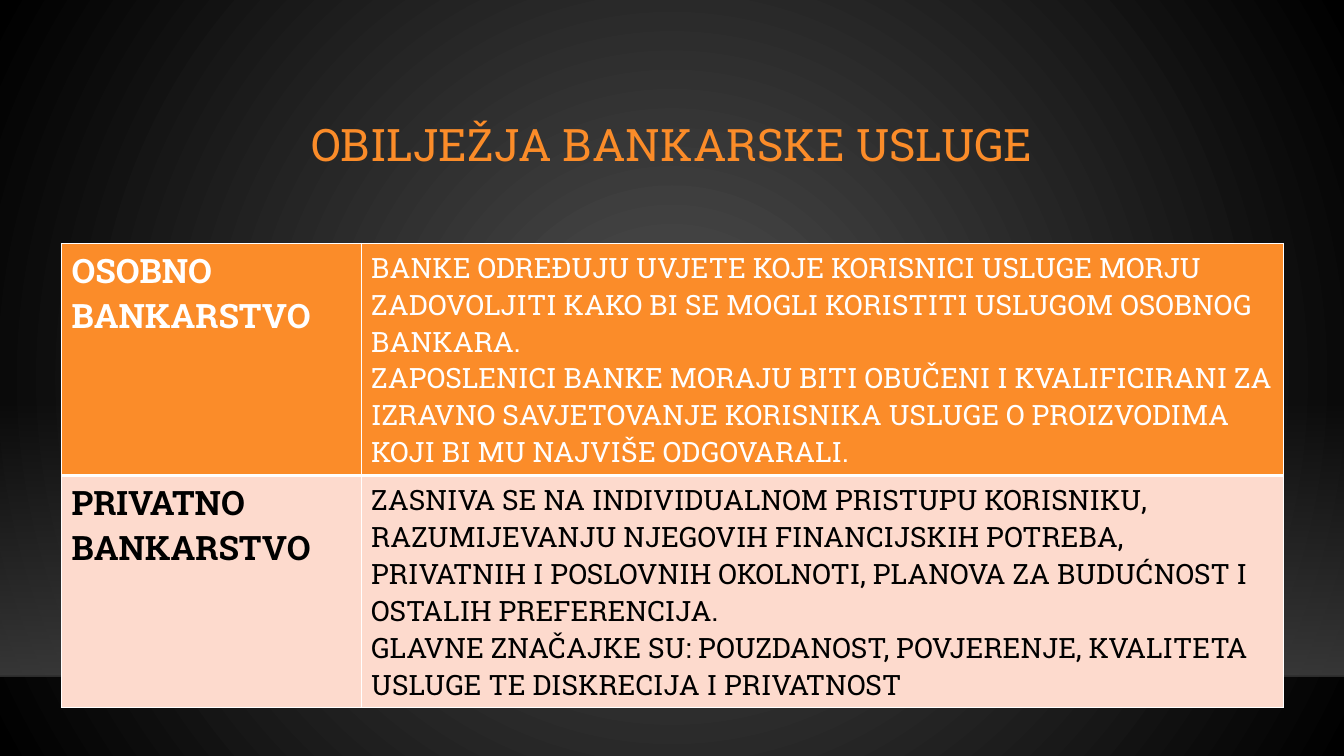
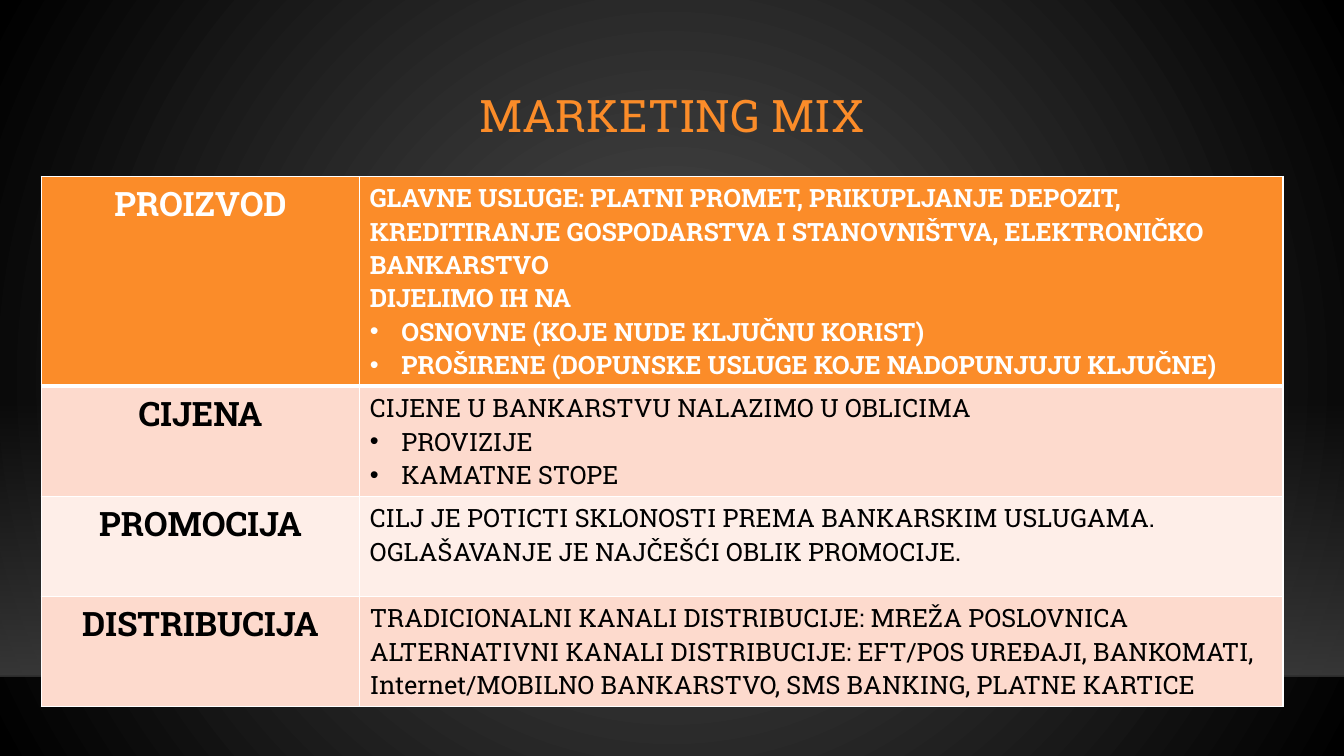
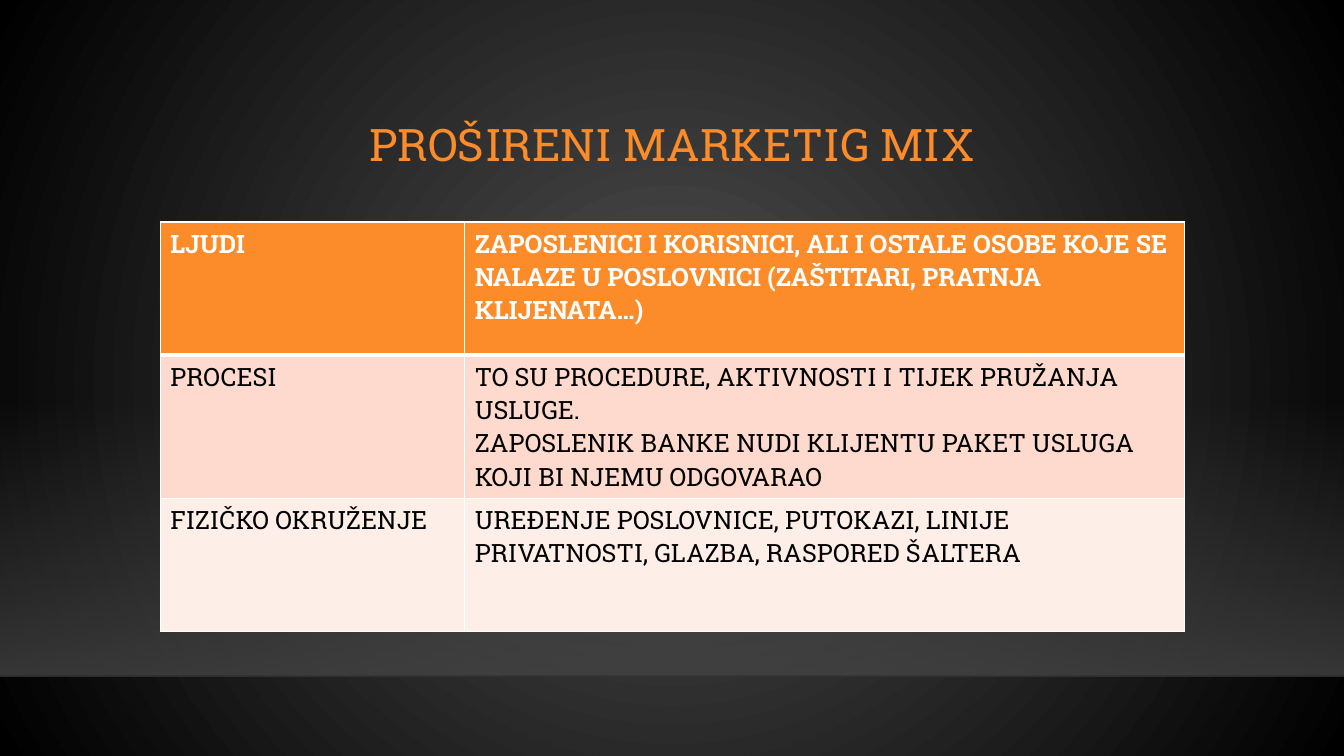
from dataclasses import dataclass

from pptx import Presentation, oxml
from pptx.dml.color import RGBColor
from pptx.enum import shapes, text
from pptx.oxml import ns
from pptx.util import Pt


@dataclass(frozen=True)
class Theme:
    font: str = "Roboto Slab"
    accent: str = "FB8C29"
    white: str = "FFFFFF"
    black: str = "000000"
    bands: tuple = ("FDDACD", "FEEEE8")
    glow: str = "505050"
    floor: str = "454545"
    edge: str = "000001"
    title_size: float = 32
    label_size: float = 24
    large_size: float = 20
    text_size: float = 18
    rule: float = 1
    heavy_rule: float = 3


@dataclass(frozen=True)
class Bullet:
    words: str


def xml(markup):
    """Build an element from markup whose root is in the drawing namespace."""
    head, rest = markup.split(" ", 1)
    return oxml.parse_xml(f"{head} {ns.nsdecls('a')} {rest}")


def gradient(stops, direction):
    marks = "".join(
        f'<a:gs pos="{place * 1000}"><a:srgbClr val="{colour}">'
        f'<a:alpha val="{alpha * 1000}"/></a:srgbClr></a:gs>'
        for place, colour, alpha in stops)
    return xml(f'<a:gradFill rotWithShape="1"><a:gsLst>{marks}</a:gsLst>{direction}</a:gradFill>')


def use_gradient(owner, fill, stops, direction):
    fill.gradient()
    plain = owner.xpath(".//a:gradFill")[0]
    plain.getparent().replace(plain, gradient(stops, direction))


class Deck:
    width, height = 960, 540

    def __init__(self, theme):
        self.theme = theme
        self.file = Presentation()
        self.file.slide_width, self.file.slide_height = Pt(self.width), Pt(self.height)
        self.page = None

    # Page and title
    def add_page(self, title, top):
        self.page = self.file.slides.add_slide(self.file.slide_layouts[5])
        box = self.page.shapes.title
        box.left, box.top, box.width, box.height = Pt(114.5), Pt(top), Pt(731.5), Pt(83)
        box.text_frame.vertical_anchor = text.MSO_ANCHOR.MIDDLE
        para = box.text_frame.paragraphs[0]
        para.alignment = text.PP_ALIGN.CENTER
        para.line_spacing = 0.9
        self.add_span(para, title, self.theme.title_size, self.theme.accent)

    def add_span(self, para, words, size, colour, bold=False):
        span = para.add_run()
        span.text = words
        span.font.name, span.font.size, span.font.bold = self.theme.font, Pt(size), bold
        span.font.color.rgb = RGBColor.from_string(colour)

    # Table with a coloured first row and alternating rows below
    def add_table(self, left, top, height, columns, row_height, rows, label_size, text_size,
                  label_align=text.PP_ALIGN.LEFT, bold_labels=True, bold_first_text=True):
        frame = self.page.shapes.add_table(
            len(rows), len(columns), Pt(left), Pt(top), Pt(sum(columns)), Pt(height))
        table = frame.table
        for column, width in zip(table.columns, columns):
            column.width = Pt(width)
        for index, (label, *paragraphs) in enumerate(rows):
            first = index == 0
            table.rows[index].height = Pt(row_height)
            colour = self.theme.white if first else self.theme.black
            fill = self.theme.accent if first else self.theme.bands[(index - 1) % 2]
            label_cell, text_cell = table.cell(index, 0), table.cell(index, 1)
            self.fill_cell(label_cell, [label], label_size, colour, first or bold_labels, label_align)
            self.fill_cell(text_cell, paragraphs, text_size, colour, first and bold_first_text)
            for cell in (label_cell, text_cell):
                cell.fill.solid()
                cell.fill.fore_color.rgb = RGBColor.from_string(fill)
                self.rule_cell(cell, self.theme.heavy_rule if first else self.theme.rule)
        frame.height = Pt(height)

    def fill_cell(self, cell, paragraphs, size, colour, bold, align=text.PP_ALIGN.LEFT):
        for index, item in enumerate(paragraphs):
            frame = cell.text_frame
            para = frame.add_paragraph() if index else frame.paragraphs[0]
            para.alignment = align
            if isinstance(item, Bullet):
                self.add_bullet(para)
                item = item.words
            self.add_span(para, item, size, colour, bold)

    def add_bullet(self, para):
        props = para._p.get_or_add_pPr()
        props.set("marL", str(Pt(22.5)))
        props.set("indent", str(-Pt(22.5)))
        props.append(xml('<a:buFont typeface="Arial"/>'))
        props.append(xml('<a:buChar char="•"/>'))

    def rule_cell(self, cell, bottom):
        props = cell._tc.get_or_add_tcPr()
        for index, side in enumerate("LRTB"):
            width = Pt(bottom if side == "B" else self.theme.rule)
            props.insert(index, xml(
                f'<a:ln{side} w="{width}"><a:solidFill><a:srgbClr val="{self.theme.white}"/>'
                f'</a:solidFill></a:ln{side}>'))

    # Shared backdrop, kept on the slide master
    def add_backdrop(self):
        theme, master = self.theme, self.file.slide_master
        use_gradient(
            master.element.cSld, master.background.fill,
            [(0, theme.glow, 100), (100, theme.black, 100)],
            '<a:path path="circle"><a:fillToRect l="50000" t="50000" r="50000" b="50000"/></a:path>')

        floor = self.page.shapes.add_shape(
            shapes.MSO_SHAPE.RECTANGLE, 0, Pt(285.5), Pt(self.width), Pt(197.5))
        floor.shadow.inherit = False
        floor.line.fill.background()
        use_gradient(floor.element, floor.fill, [(0, theme.floor, 0), (100, theme.floor, 80)],
                     '<a:lin ang="5400000" scaled="0"/>')

        edge = self.page.shapes.add_connector(
            shapes.MSO_CONNECTOR.STRAIGHT, 0, Pt(483), Pt(self.width), Pt(483))
        edge.line.width = Pt(theme.rule)
        edge.line.color.rgb = RGBColor.from_string(theme.edge)
        edge.element.xpath(".//a:ln//a:srgbClr")[0].append(xml('<a:alpha val="20000"/>'))
        edge.element.spPr.append(xml('<a:effectLst />'))

        for index, shape in enumerate((floor, edge)):
            shape.element.xpath(".//p:cNvPr")[0].set("id", str(100 + index))
            master.shapes.element.insert(2 + index, shape.element)


def main():
    theme = Theme()
    deck = Deck(theme)

    # Features of the service
    deck.add_page("OBILJEŽJA BANKARSKE USLUGE", 63.5)
    deck.add_table(44, 174, 302.5, (214, 659), 133.5, [
        ("OSOBNO BANKARSTVO",
         "BANKE ODREĐUJU UVJETE KOJE KORISNICI USLUGE MORJU ZADOVOLJITI KAKO BI SE MOGLI "
         "KORISTITI USLUGOM OSOBNOG BANKARA.",
         "ZAPOSLENICI BANKE MORAJU BITI OBUČENI I KVALIFICIRANI ZA IZRAVNO SAVJETOVANJE "
         "KORISNIKA USLUGE O PROIZVODIMA KOJI BI MU NAJVIŠE ODGOVARALI."),
        ("PRIVATNO BANKARSTVO",
         "ZASNIVA SE NA INDIVIDUALNOM PRISTUPU KORISNIKU, RAZUMIJEVANJU NJEGOVIH FINANCIJSKIH "
         "POTREBA, PRIVATNIH I POSLOVNIH OKOLNOTI, PLANOVA ZA BUDUĆNOST I OSTALIH PREFERENCIJA.",
         "GLAVNE ZNAČAJKE SU: POUZDANOST, POVJERENJE, KVALITETA USLUGE TE DISKRECIJA I PRIVATNOST"),
    ], theme.label_size, theme.large_size, bold_first_text=False)

    # Marketing mix
    deck.add_page("MARKETING MIX", 43)
    deck.add_table(29.5, 126, 352, (227.5, 659.5), 71.5, [
        ("PROIZVOD",
         "GLAVNE USLUGE: PLATNI PROMET, PRIKUPLJANJE DEPOZIT, KREDITIRANJE GOSPODARSTVA I "
         "STANOVNIŠTVA, ELEKTRONIČKO BANKARSTVO",
         "DIJELIMO IH NA",
         Bullet("OSNOVNE (KOJE NUDE KLJUČNU KORIST)"),
         Bullet("PROŠIRENE (DOPUNSKE USLUGE KOJE NADOPUNJUJU KLJUČNE)")),
        ("CIJENA",
         "CIJENE U BANKARSTVU NALAZIMO U OBLICIMA",
         Bullet("PROVIZIJE"),
         Bullet("KAMATNE STOPE")),
        ("PROMOCIJA",
         "CILJ JE POTICTI SKLONOSTI PREMA BANKARSKIM USLUGAMA. OGLAŠAVANJE JE NAJČEŠĆI OBLIK "
         "PROMOCIJE."),
        ("DISTRIBUCIJA",
         "TRADICIONALNI KANALI DISTRIBUCIJE: MREŽA POSLOVNICA",
         "ALTERNATIVNI KANALI DISTRIBUCIJE: EFT/POS UREĐAJI, BANKOMATI, Internet/MOBILNO "
         "BANKARSTVO, SMS BANKING, PLATNE KARTICE"),
    ], theme.label_size, theme.text_size, label_align=text.PP_ALIGN.CENTER)

    # Extended marketing mix
    deck.add_page("PROŠIRENI MARKETIG MIX", 63.5)
    deck.add_table(114.5, 158.5, 285, (217.5, 514), 95, [
        ("LJUDI",
         "ZAPOSLENICI I KORISNICI, ALI I OSTALE OSOBE KOJE SE NALAZE U POSLOVNICI (ZAŠTITARI, "
         "PRATNJA KLIJENATA…)"),
        ("PROCESI",
         "TO SU PROCEDURE, AKTIVNOSTI I TIJEK PRUŽANJA USLUGE.",
         "ZAPOSLENIK BANKE NUDI KLIJENTU PAKET USLUGA KOJI BI NJEMU ODGOVARAO"),
        ("FIZIČKO OKRUŽENJE",
         "UREĐENJE POSLOVNICE, PUTOKAZI, LINIJE PRIVATNOSTI, GLAZBA, RASPORED ŠALTERA"),
    ], theme.text_size, theme.text_size, bold_labels=False)

    deck.add_backdrop()
    deck.file.save("out.pptx")


if __name__ == "__main__":
    main()
